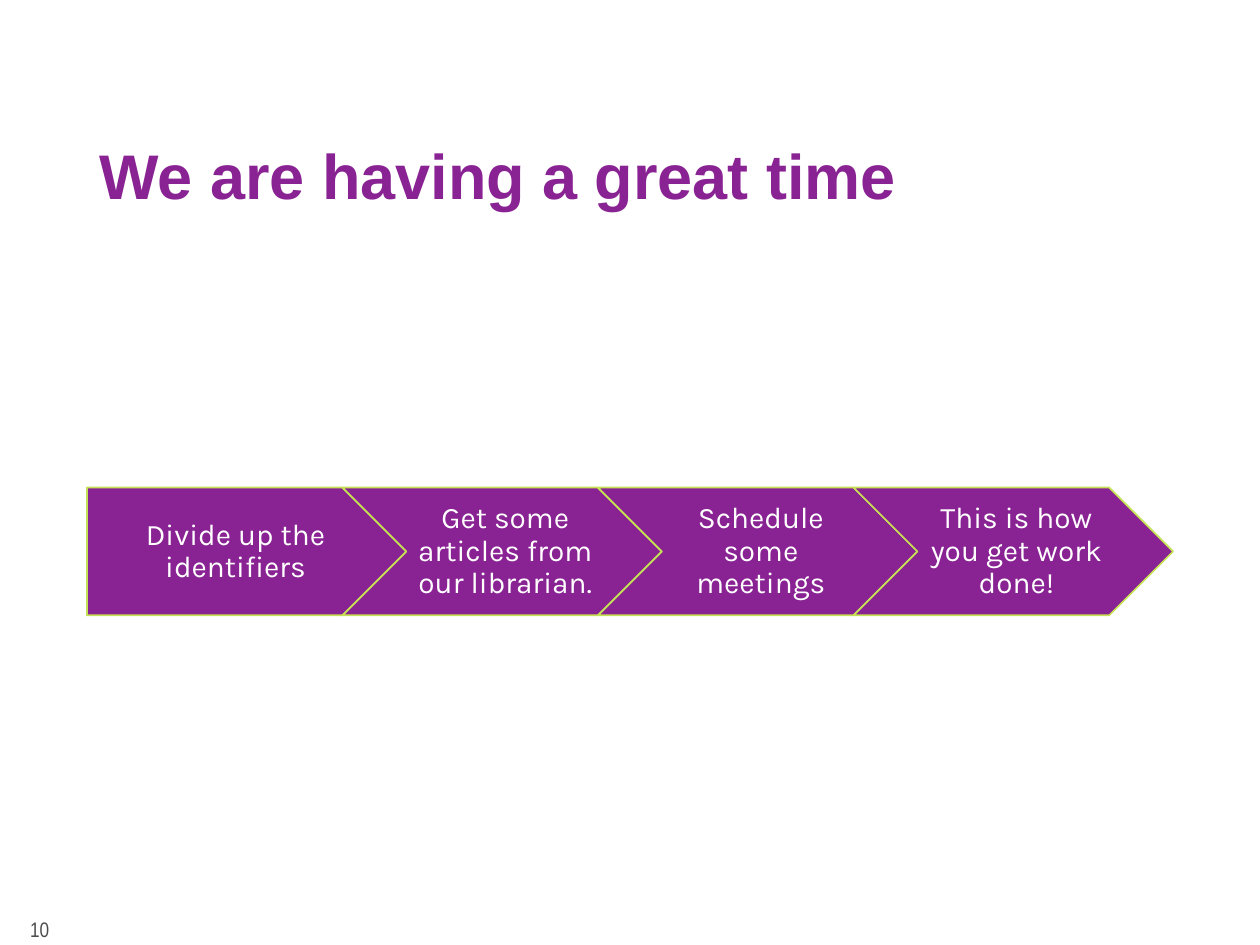
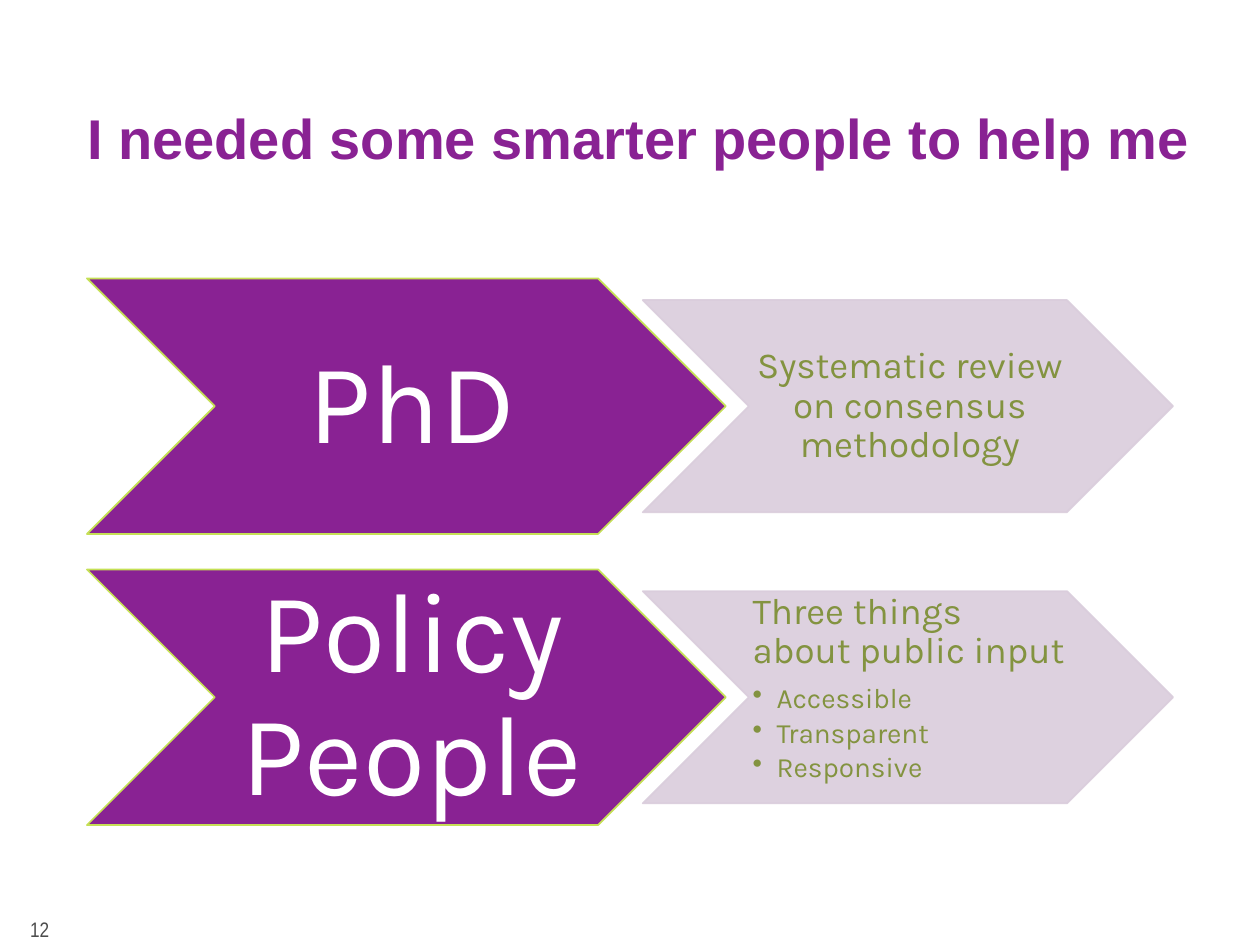
from lxml.etree import SubElement
from pptx import Presentation
from pptx.dml.color import RGBColor
from pptx.enum.shapes import MSO_SHAPE
from pptx.enum.text import MSO_ANCHOR, PP_ALIGN
from pptx.oxml.ns import qn
from pptx.util import Inches, Pt

PURPLE, LIME, LILAC = "892293", "C5E055", "DACDDC"
OLIVE, WHITE, GREY = "839340", "FFFFFF", "4D4D4D"
LEFT, WIDTH = 0.69, 8.62  # content column
ASPECT = 0.4  # height of every arrow relative to its width


def rgb(value):
    return RGBColor.from_string(value)


def set_alpha(fill, percent):
    color = fill._xPr.find(qn("a:solidFill"))[0]
    SubElement(color, qn("a:alpha"), val=str(percent * 1000))


def set_insets(tf, left, top, right, bottom):
    tf.margin_left, tf.margin_top = Inches(left), Inches(top)
    tf.margin_right, tf.margin_bottom = Inches(right), Inches(bottom)


def add_run(p, text, size, font, color, bold=False):
    r = p.add_run()
    r.text = text
    r.font.size, r.font.name, r.font.bold = Pt(size), font, bold
    r.font.color.rgb = rgb(color)


def add_text(s, box, text, size, font, color, bold=False,
             align=PP_ALIGN.LEFT, anchor=MSO_ANCHOR.TOP, spacing=None):
    tf = s.shapes.add_textbox(*map(Inches, box)).text_frame
    tf.word_wrap = True
    tf.vertical_anchor = anchor
    p = tf.paragraphs[0]
    p.alignment, p.line_spacing = align, spacing
    add_run(p, text, size, font, color, bold)


def add_title(s, box, text, size, align=PP_ALIGN.LEFT):
    add_text(s, box, text, size, "Arial", PURPLE, True, align, spacing=0.9)


def add_page_number(s, number):
    add_text(s, (0.14, 7.25, 2.25, 0.25), str(number), 12, "Arial Narrow", GREY,
             anchor=MSO_ANCHOR.MIDDLE)


def add_arrow(s, kind, left, top, width, fill, line, insets, alpha=None):
    """Add an arrow of the shared proportions and return its text frame."""
    sp = s.shapes.add_shape(kind, *map(Inches, (left, top, width, ASPECT * width)))
    sp.shadow.inherit = False
    sp.line.width = Pt(1)
    for paint, color in ((sp.fill, fill), (sp.line.fill, line)):
        paint.solid()
        paint.fore_color.rgb = rgb(color)
        if alpha:
            set_alpha(paint, alpha)
    tf = sp.text_frame
    tf.word_wrap = True
    tf.vertical_anchor = MSO_ANCHOR.MIDDLE
    set_insets(tf, *insets)
    return tf


def write_label(p, text, size, color, align=PP_ALIGN.CENTER, after=0.35):
    """Fill a paragraph; the space after it is a share of the text size."""
    p.alignment, p.line_spacing = align, 0.9
    p.space_after = Pt(round(after * size, 1))
    add_run(p, text, size, "Karla", color)


def write_bullet(p, text):
    pPr = p._p.get_or_add_pPr()
    indent = Inches(0.19)
    pPr.set("marL", str(indent))
    pPr.set("indent", str(-indent))
    write_label(p, text, 16, OLIVE, PP_ALIGN.LEFT, 0.15)
    SubElement(pPr, qn("a:buChar"), char="•")


def add_process(s, left, top, width, steps):
    """Row of arrows, each overlapping the next by a fifth of its width."""
    pitch = 0.8
    arrow_width = width / (1 + pitch * (len(steps) - 1))
    for i, step in enumerate(steps):
        kind = MSO_SHAPE.CHEVRON if i else MSO_SHAPE.PENTAGON
        tf = add_arrow(s, kind, left + i * pitch * arrow_width, top, arrow_width,
                       PURPLE, LIME, (0.07 if i else 0.1, 0.05, 0.02, 0.05))
        write_label(tf.paragraphs[0], step, 17, WHITE)


def add_topic_row(s, left, top, width, topic, detail, bullets):
    """Large topic chevron followed by a smaller, vertically centred detail."""
    big = width / 1.7
    small = 0.83 * big
    tf = add_arrow(s, MSO_SHAPE.CHEVRON, left, top, big, PURPLE, LIME,
                   (0.09, 0.05, 0, 0.05))
    write_label(tf.paragraphs[0], topic, 65, WHITE)

    tf = add_arrow(s, MSO_SHAPE.CHEVRON, left + width - small,
                   top + ASPECT * (big - small) / 2, small, LILAC, LILAC,
                   (0.03, 0.01, 0, 0.01), alpha=90)
    if bullets:
        tf.vertical_anchor = MSO_ANCHOR.TOP
    write_label(tf.paragraphs[0], detail, 21, OLIVE,
                PP_ALIGN.LEFT if bullets else PP_ALIGN.CENTER)
    for bullet in bullets:
        write_bullet(tf.add_paragraph(), bullet)


def build_process_slide(s):
    add_title(s, (LEFT, 1.1, WIDTH, 0.75), "We are having a great time", 36)
    add_process(s, LEFT, 3.87, WIDTH, [
        "Divide up the identifiers",
        "Get some articles from our librarian.",
        "Schedule some meetings",
        "This is how you get work done!",
    ])
    add_page_number(s, 10)


def build_topics_slide(s):
    add_title(s, (0.14, 0.83, 9.86, 1.34),
              "I needed some smarter people to help me", 32, PP_ALIGN.CENTER)
    rows = [
        ("PhD", "Systematic review on consensus methodology", []),
        ("Policy People", "Three things about public input",
         ["Accessible", "Transparent", "Responsive"]),
    ]
    for i, row in enumerate(rows):
        add_topic_row(s, LEFT, 2.21 + i * 2.31, WIDTH, *row)
    add_page_number(s, 12)


def main():
    prs = Presentation()
    prs.slide_width, prs.slide_height = Inches(10), Inches(7.5)
    for build in (build_process_slide, build_topics_slide):
        build(prs.slides.add_slide(prs.slide_layouts[6]))
    prs.save("out.pptx")


if __name__ == "__main__":
    main()
